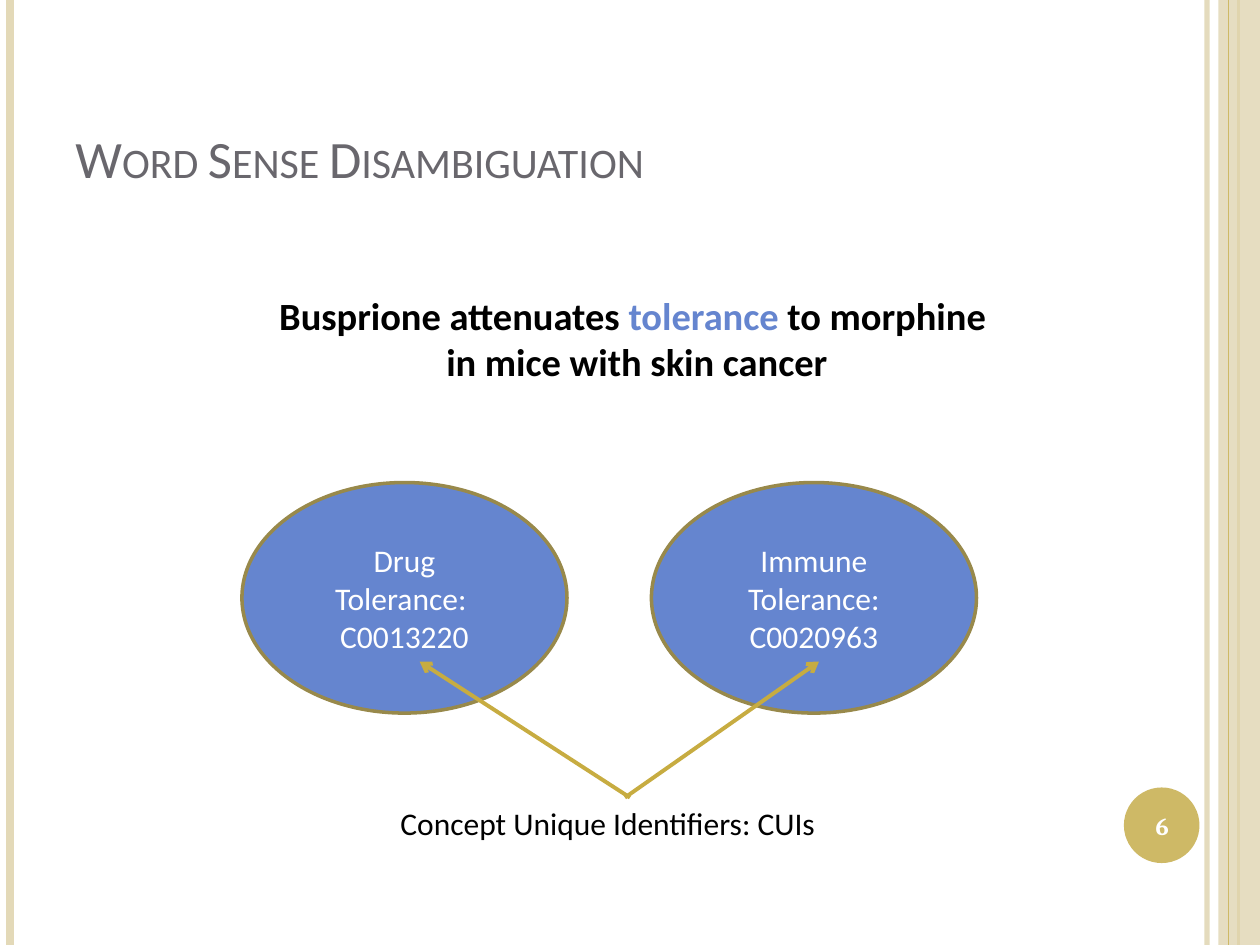
"""Build a slide on word sense disambiguation with two concept ellipses."""
from lxml.etree import SubElement
from pptx import Presentation
from pptx.dml.color import RGBColor
from pptx.enum.shapes import MSO_CONNECTOR as Connector, MSO_SHAPE as Shape
from pptx.enum.text import MSO_ANCHOR as Anchor, PP_ALIGN as Align
from pptx.oxml.ns import qn
from pptx.util import Inches, Pt

COLORS = {
    "sand": "E3D9B8", "gold": "CEB966", "arrow": "C7AC41", "outline": "98894B",
    "blue": "6585CF", "title": "69676D", "black": "000000", "white": "FFFFFF",
}


def rgb(name):
    return RGBColor.from_string(COLORS[name])


def set_opacity(element, percent):
    color = next(element.iter(qn("a:srgbClr")))
    SubElement(color, qn("a:alpha"), val=str(percent * 1000))


def add_line(page, start, end, color, width, opacity=100, arrow=False):
    ends = [Inches(value) for value in (*start, *end)]
    line = page.shapes.add_connector(Connector.STRAIGHT, *ends)
    line.line.color.rgb = rgb(color)
    line.line.width = Pt(width)
    properties = line.element.spPr
    if opacity < 100:
        set_opacity(properties, opacity)
    if arrow:
        SubElement(properties.find(qn("a:ln")), qn("a:tailEnd"), type="arrow")
    SubElement(properties, qn("a:effectLst"))


def add_shape(page, kind, frame, fill, outline=None, opacity=100):
    shape = page.shapes.add_shape(kind, *map(Inches, frame))
    shape.shadow.inherit = False
    shape.fill.solid()
    shape.fill.fore_color.rgb = rgb(fill)
    if opacity < 100:
        set_opacity(shape.element.spPr, opacity)
    if outline:
        shape.line.color.rgb = rgb(outline)
        shape.line.width = Pt(2)
    else:
        shape.line.fill.background()
    return shape


def write(shape, lines, size, color, font="Calibri", bold=False,
          align=Align.CENTER, anchor=Anchor.MIDDLE):
    """Write lines, each a list of (text, colour or None) spans."""
    frame = shape.text_frame
    frame.word_wrap = True
    frame.vertical_anchor = anchor
    for index, spans in enumerate(lines):
        para = frame.add_paragraph() if index else frame.paragraphs[0]
        para.alignment = align
        para.font.name = font
        para.font.size = Pt(size)
        para.font.bold = bold
        para.font.color.rgb = rgb(color)
        for text, accent in spans:
            span = para.add_run()
            span.text = text
            if accent:
                span.font.color.rgb = rgb(accent)


def add_text(page, frame, lines, size, color, **style):
    box = page.shapes.add_textbox(*map(Inches, frame))
    write(box, lines, size, color, **style)
    return box


def add_rails(page):
    def rail(x, color, width, opacity=100):
        add_line(page, (x, 0), (x, 7.5), color, width, opacity)

    rail(9.58, "sand", 3, 93)
    rail(0.08, "sand", 4.5)
    rail(9.83, "gold", 1.5)
    add_shape(page, Shape.RECTANGLE, (9.67, 0, 0.33, 7.5), "sand", opacity=87)
    rail(9.75, "gold", 0.75)


def add_title(page, text):
    box = add_text(page, (0.5, 0.3, 8.17, 1.25), [[(text, None)]], 30, "title",
                   align=Align.LEFT, anchor=Anchor.BOTTOM)
    span = box.text_frame.paragraphs[0].runs[0]
    span.font.size = Pt(30)
    span.font._element.set("cap", "small")


def add_sentence(page):
    lines = [
        [("Busprione attenuates ", None), ("tolerance", "blue"), (" to morphine ", None)],
        [("in mice with skin cancer", None)],
    ]
    box = add_text(page, (1.75, 2.25, 6.61, 0.76), lines, 22, "black",
                   bold=True, anchor=Anchor.TOP)
    box.text_frame.margin_top = Inches(0.07)
    box.text_frame.margin_bottom = Inches(0.04)


def add_concept(page, left, lines):
    ellipse = add_shape(page, Shape.OVAL, (left, 3.83, 2.58, 1.83), "blue", "outline")
    write(ellipse, [[(text, None)] for text in lines], 18, "white")


def add_page_number(page, number):
    add_text(page, (8.89, 6.27, 0.67, 0.57), [[(number, None)]], 14, "white",
             font="Cambria", bold=True)


def main():
    deck = Presentation()
    deck.slide_width, deck.slide_height = Inches(10), Inches(7.5)
    page = deck.slides.add_slide(deck.slide_layouts[6])
    add_rails(page)
    add_shape(page, Shape.OVAL, (8.92, 6.25, 0.6, 0.6), "gold")
    add_title(page, "Word Sense Disambiguation")
    add_sentence(page)
    add_concept(page, 1.92, ["Drug", "Tolerance: ", "C0013220"])
    add_concept(page, 5.17, ["Immune", "Tolerance:", "C0020963"])
    add_text(page, (3.08, 6.33, 3.75, 0.4), [[("Concept Unique Identifiers: CUIs", None)]],
             18, "black", align=Align.LEFT, anchor=Anchor.TOP)
    add_line(page, (4.96, 6.33), (6.5, 5.25), "arrow", 2.25, arrow=True)
    add_line(page, (5, 6.33), (3.33, 5.25), "arrow", 2.25, arrow=True)
    add_page_number(page, "6")
    deck.save("out.pptx")


if __name__ == "__main__":
    main()
